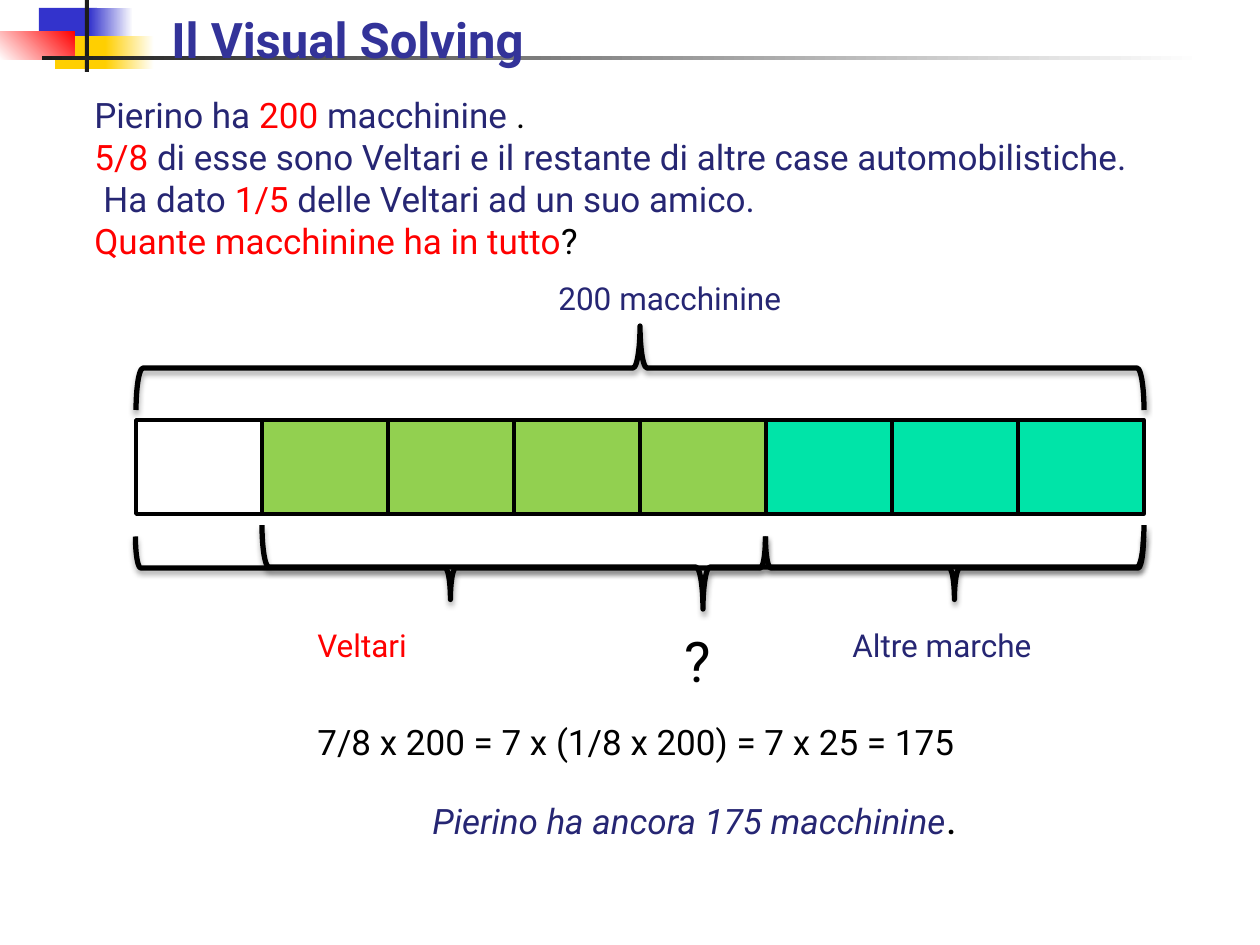
"""Build the Visual Solving slide: a fraction problem shown as a bar of eight parts."""
from dataclasses import dataclass
from typing import Optional

from lxml.etree import SubElement
from pptx import Presentation
from pptx.dml.color import RGBColor
from pptx.enum.shapes import MSO_SHAPE
from pptx.enum.text import MSO_ANCHOR, MSO_AUTO_SIZE
from pptx.oxml.ns import qn
from pptx.util import Emu, Pt


@dataclass(frozen=True)
class Theme:
    font: str = "Roboto"
    navy: str = "262673"
    red: str = "FF0000"
    black: str = "000000"
    white: str = "FFFFFF"
    green: str = "92D050"
    teal: str = "00E4A8"
    title: str = "333399"
    blue: str = "3333CC"
    yellow: str = "FFCF01"
    charcoal: str = "1C1C1C"
    label_size: int = 18
    body_size: int = 20
    stop_size: int = 24
    title_size: int = 28
    question_size: int = 32


@dataclass(frozen=True)
class Box:
    left: int
    top: int
    width: int
    height: int


@dataclass(frozen=True)
class Words:
    text: str
    color: str
    size: Optional[int] = None
    italic: bool = False


@dataclass(frozen=True)
class Line:
    words: tuple[Words, ...]
    indent: int = 0


@dataclass(frozen=True)
class Caption:
    box: Box
    size: int
    lines: tuple[Line, ...]
    is_title: bool = False


@dataclass(frozen=True)
class Brace:
    box: Box
    rotation: int


@dataclass(frozen=True)
class Ornament:
    box: Box
    start: str
    end: Optional[str] = None
    angle: int = 0


THEME = Theme()
PART = 126
BAR = Box(136, 420, 8 * PART, 94)
PART_COLORS = [THEME.white] + [THEME.green] * 4 + [THEME.teal] * 3

BRACES = [
    Brace(Box(BAR.left, 326, 8 * PART, 84), 90),
    Brace(Box(BAR.left, 536, 5 * PART, 63), 270),
    Brace(Box(BAR.left + 5 * PART, 536, 3 * PART, 63), 270),
    Brace(Box(BAR.left + PART, 525, 7 * PART, 84), 270),
]

ORNAMENTS = [
    Ornament(Box(39, 8, 58, 33), THEME.blue),
    Ornament(Box(89, 8, 44, 33), THEME.blue, THEME.white),
    Ornament(Box(55, 36, 57, 33), THEME.yellow),
    Ornament(Box(105, 36, 49, 33), THEME.yellow, THEME.white),
    Ornament(Box(0, 31, 75, 29), THEME.white, THEME.red, 45),
    Ornament(Box(85, 0, 4, 72), THEME.charcoal),
    Ornament(Box(42, 56, 1160, 4), THEME.charcoal, THEME.white),
]


def line(*words: Words, indent: int = 0) -> Line:
    """Gather words into one line."""
    return Line(words, indent)


PROBLEM = (
    line(Words("Pierino ha ", THEME.navy), Words("200 ", THEME.red),
         Words("macchinine", THEME.navy), Words(" .", THEME.black)),
    line(Words("5/8 ", THEME.red),
         Words("di esse sono Veltari e il restante di altre case automobilistiche.", THEME.navy)),
    line(Words("Ha dato ", THEME.navy), Words("1/5 ", THEME.red),
         Words("delle Veltari ad un suo amico.", THEME.navy), indent=9),
    line(Words("Quante macchinine ha in tutto", THEME.red), Words("?", THEME.black)),
)

CAPTIONS = [
    Caption(Box(546, 273, 265, 50), THEME.label_size,
            (line(Words("200 macchinine", THEME.navy)),)),
    Caption(Box(305, 620, 305, 50), THEME.label_size,
            (line(Words("Veltari", THEME.red)),)),
    Caption(Box(840, 620, 231, 50), THEME.label_size,
            (line(Words("Altre marche", THEME.navy)),)),
    Caption(Box(672, 620, 84, 81), THEME.question_size,
            (line(Words("?", THEME.black)),)),
    Caption(Box(305, 714, 703, 55), THEME.body_size,
            (line(Words("7/8 x 200 = 7 x (1/8 x 200) = 7 x 25 = 175", THEME.black)),)),
    Caption(Box(420, 786, 708, 63), THEME.body_size,
            (line(Words("Pierino ha ancora 175 macchinine", THEME.navy, italic=True),
                  Words(".", THEME.black, THEME.stop_size)),)),
    Caption(Box(82, 87, 1178, 183), THEME.body_size, PROBLEM),
    Caption(Box(159, 0, 976, 78), THEME.title_size,
            (line(Words("Il Visual Solving", THEME.title)),), is_title=True),
]


def px(length: float) -> Emu:
    """Turn px into EMU."""
    return Emu(round(length * 914400 / 126))


def rgb(color: str) -> RGBColor:
    """Read a hex colour."""
    return RGBColor.from_string(color)


def place(shapes, kind: MSO_SHAPE, box: Box):
    """Add a preset shape without a shadow."""
    shape = shapes.add_shape(kind, px(box.left), px(box.top), px(box.width), px(box.height))
    shape.shadow.inherit = False
    return shape


def outline(shape, width: int) -> None:
    """Give a shape a black outline."""
    shape.line.color.rgb = rgb(THEME.black)
    shape.line.width = Pt(width)


def draw_part(shapes, index: int, color: str) -> None:
    """Draw one eighth of the bar."""
    part = place(shapes, MSO_SHAPE.RECTANGLE,
                 Box(BAR.left + index * PART, BAR.top, PART, BAR.height))
    part.fill.solid()
    part.fill.fore_color.rgb = rgb(color)
    outline(part, 2)


def draw_brace(shapes, brace: Brace) -> None:
    """Draw a turned brace that spans its box, with a soft shadow."""
    box = brace.box
    shift = (box.width - box.height) // 2
    shape = place(shapes, MSO_SHAPE.LEFT_BRACE,
                  Box(box.left + shift, box.top - shift, box.height, box.width))
    shape.rotation = brace.rotation
    shape.fill.background()
    outline(shape, 3)
    effects = shape._element.spPr.find(qn("a:effectLst"))
    shadow = SubElement(effects, qn("a:outerShdw"), blurRad="40000", dist="23000",
                        dir="5400000", rotWithShape="0")
    tint = SubElement(shadow, qn("a:srgbClr"), val=THEME.black)
    SubElement(tint, qn("a:alpha"), val="35000")


def draw_ornament(shapes, ornament: Ornament) -> None:
    """Draw one block of the corner ornament."""
    block = place(shapes, MSO_SHAPE.RECTANGLE, ornament.box)
    block.line.fill.background()
    if ornament.end is None:
        block.fill.solid()
        block.fill.fore_color.rgb = rgb(ornament.start)
        return
    block.fill.gradient()
    block.fill.gradient_angle = ornament.angle
    for stop, color in zip(block.fill.gradient_stops, (ornament.start, ornament.end)):
        stop.color.rgb = rgb(color)


def write_caption(shapes, caption: Caption) -> None:
    """Write a block of text."""
    box = caption.box
    frame = shapes.add_textbox(px(box.left), px(box.top), px(box.width), px(box.height)).text_frame
    frame.word_wrap = True
    if caption.is_title:
        frame.vertical_anchor = MSO_ANCHOR.MIDDLE
    else:
        frame.auto_size = MSO_AUTO_SIZE.SHAPE_TO_FIT_TEXT
    for number, content in enumerate(caption.lines):
        paragraph = frame.add_paragraph() if number else frame.paragraphs[0]
        paragraph.font.name = THEME.font
        paragraph.font.size = Pt(caption.size)
        paragraph.font.bold = caption.is_title
        if content.indent:
            paragraph._p.get_or_add_pPr().set("marL", str(px(content.indent)))
        for words in content.words:
            run = paragraph.add_run()
            run.text = words.text
            run.font.color.rgb = rgb(words.color)
            if words.size:
                run.font.size = Pt(words.size)
            if words.italic:
                run.font.italic = True


def main() -> None:
    """Build and save the slide."""
    deck = Presentation()
    deck.slide_width, deck.slide_height = px(1260), px(945)
    shapes = deck.slides.add_slide(deck.slide_layouts[6]).shapes
    corner = shapes.add_group_shape().shapes
    for ornament in ORNAMENTS:
        draw_ornament(corner, ornament)
    for index, color in enumerate(PART_COLORS):
        draw_part(shapes, index, color)
    for brace in BRACES:
        draw_brace(shapes, brace)
    for caption in CAPTIONS:
        write_caption(shapes, caption)
    deck.save("out.pptx")


if __name__ == "__main__":
    main()
